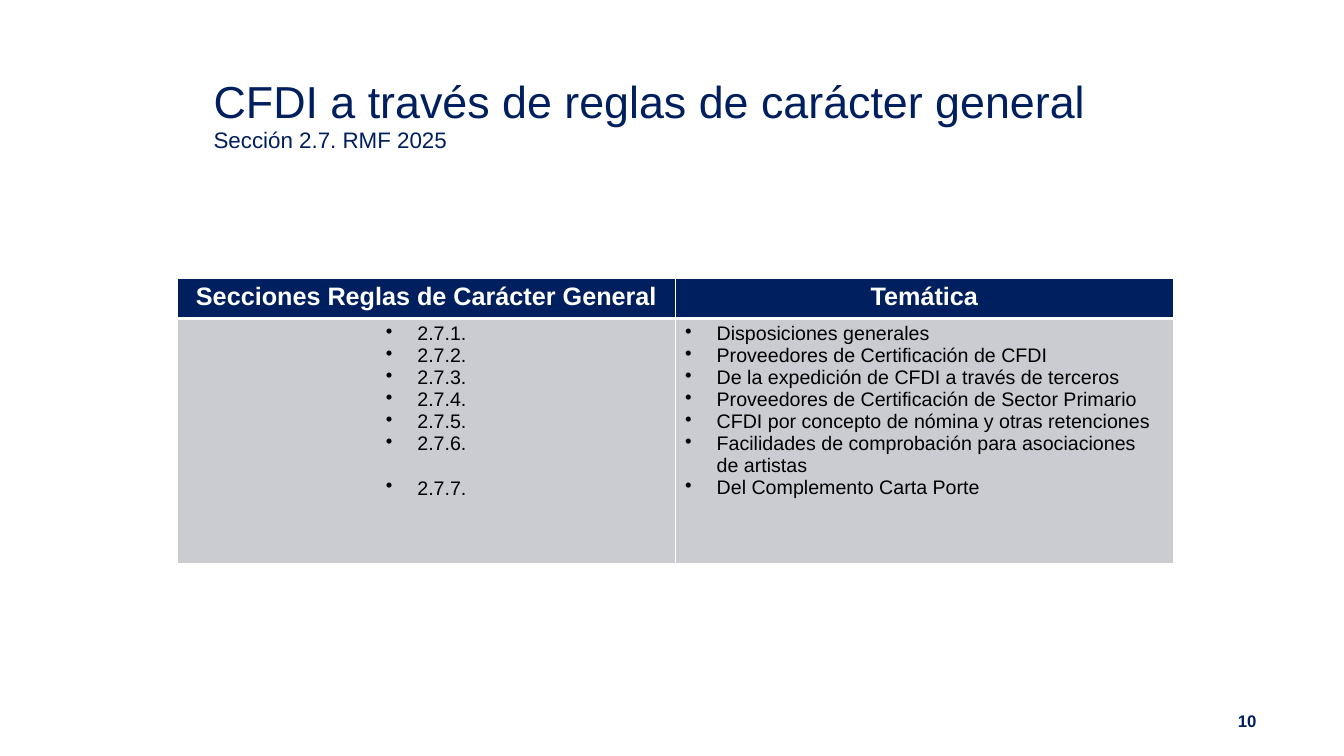
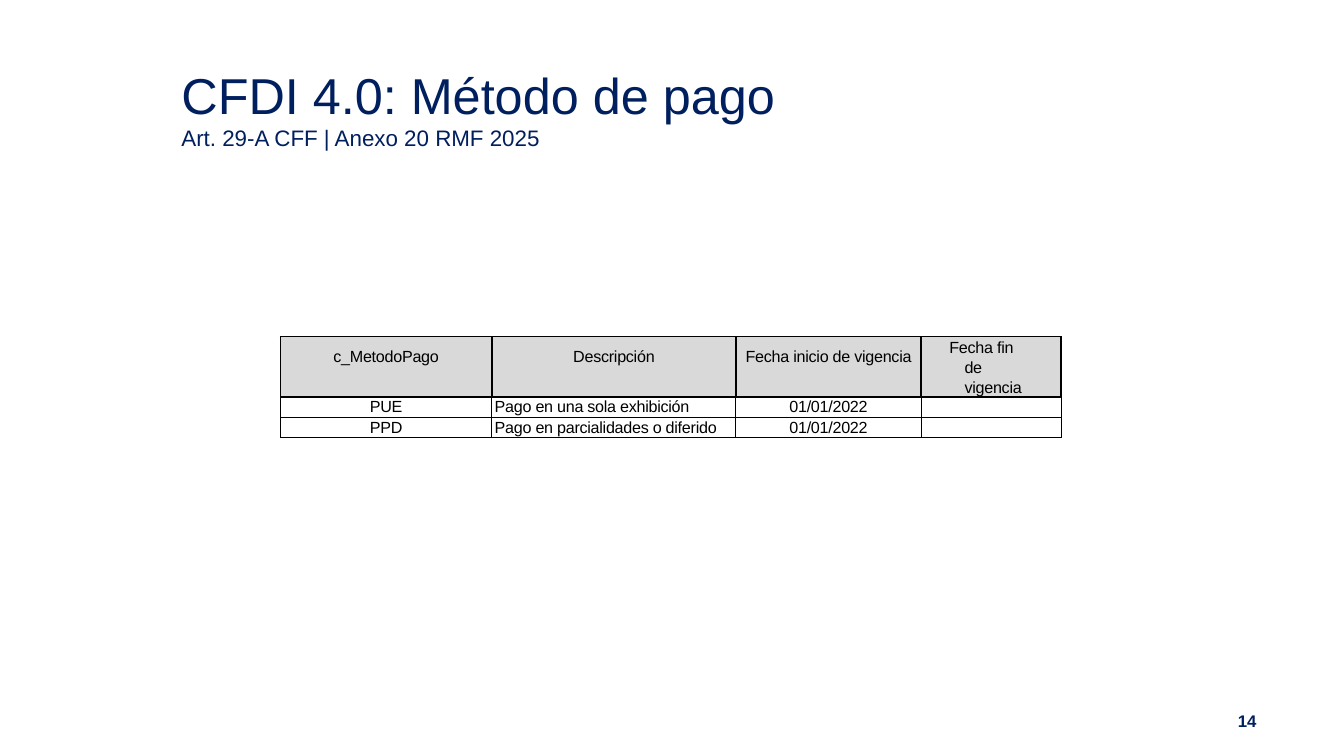
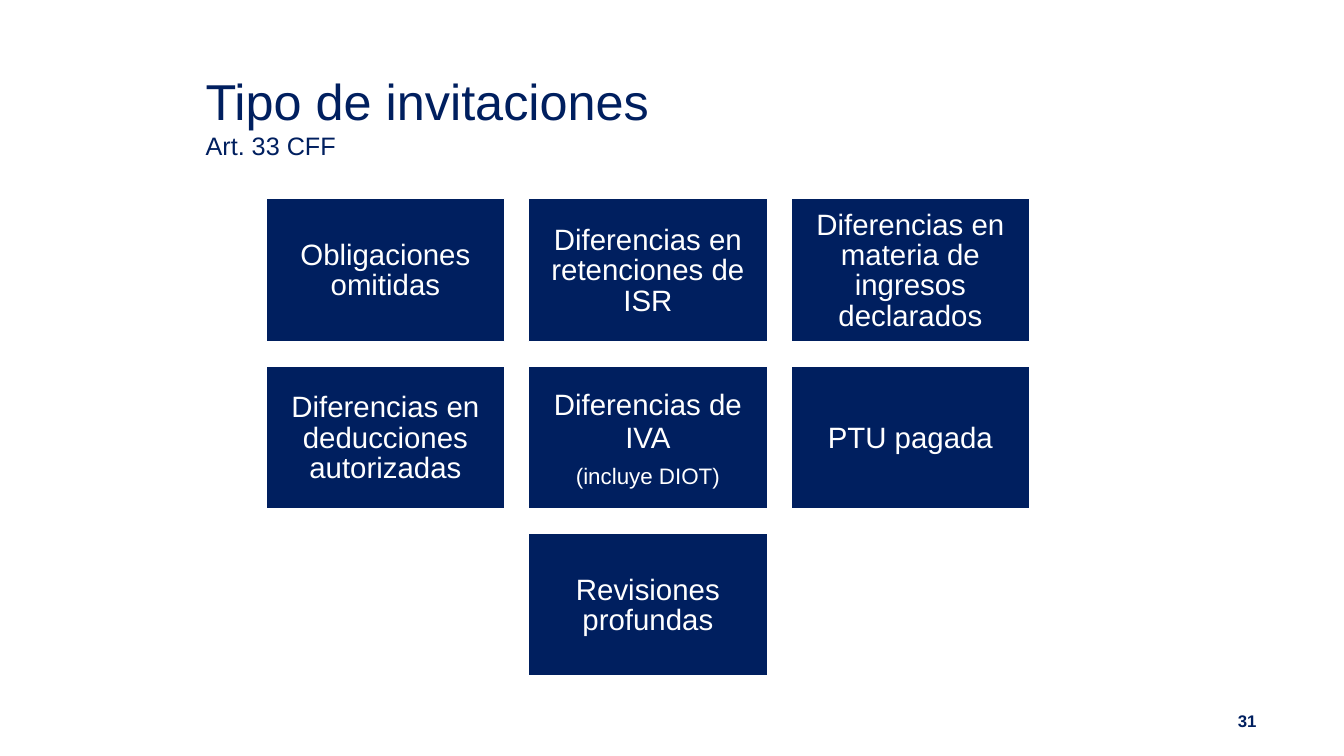
from dataclasses import dataclass

from lxml import etree
from pptx import Presentation
from pptx.dml.color import RGBColor
from pptx.enum.shapes import MSO_SHAPE
from pptx.enum.text import MSO_ANCHOR, PP_ALIGN
from pptx.oxml.ns import qn
from pptx.util import Pt

RECTANGLE = MSO_SHAPE.RECTANGLE
LEFT, CENTER = PP_ALIGN.LEFT, PP_ALIGN.CENTER
TOP, MIDDLE = MSO_ANCHOR.TOP, MSO_ANCHOR.MIDDLE


@dataclass(frozen=True)
class Theme:
    font: str = "Arial"
    navy: str = "001F5F"
    white: str = "FFFFFF"
    black: str = "000000"
    body_gray: str = "CACCD2"
    header_gray: str = "D9D9D9"
    page_size: float = 12
    header_size: float = 18
    body_size: float = 14
    catalog_size: float = 11.5
    card_size: float = 21
    note_size: float = 16


THEME = Theme()


def add_paragraph(frame, text, size, color, bold=False, tracking=0, **layout):
    """Write the next paragraph, filling the empty first one when there is one."""
    paragraph = frame.paragraphs[0]
    if paragraph.runs:
        paragraph = frame.add_paragraph()
    run = paragraph.add_run()
    run.text = text
    run.font.color.rgb = RGBColor.from_string(color)
    font_values = {"name": THEME.font, "size": Pt(size), "bold": bold}
    for name, value in font_values.items():
        setattr(run.font, name, value)
    if tracking:
        run.font._element.set("spc", str(round(tracking * 100)))
    for name, value in layout.items():
        setattr(paragraph, name, value)
    return paragraph


def set_indent(paragraph, left, first_line, bullet=None):
    properties = paragraph._p.get_or_add_pPr()
    properties.set("marL", str(Pt(left)))
    properties.set("indent", str(Pt(first_line)))
    if bullet:
        etree.SubElement(properties, qn("a:buChar"), char=bullet)


def set_frame(frame, anchor=TOP, left=0, top=0, right=0, bottom=0):
    values = {
        "word_wrap": True,
        "vertical_anchor": anchor,
        "margin_left": Pt(left),
        "margin_top": Pt(top),
        "margin_right": Pt(right),
        "margin_bottom": Pt(bottom),
    }
    for name, value in values.items():
        setattr(frame, name, value)


def add_text_box(slide, left, top, width, height):
    box = slide.shapes.add_textbox(Pt(left), Pt(top), Pt(width), Pt(height))
    set_frame(box.text_frame)
    return box.text_frame


def add_heading(slide, title, subtitle, left, top, title_size, subtitle_size):
    frame = add_text_box(slide, left, top, 670, 72)
    add_paragraph(frame, title, title_size, THEME.navy,
                  line_spacing=Pt(title_size * 1.18))
    add_paragraph(frame, subtitle, subtitle_size, THEME.navy,
                  line_spacing=Pt(subtitle_size * 1.155))


def add_page_number(slide, number):
    frame = add_text_box(slide, 884.2, 507.6, 24, 16)
    add_paragraph(frame, str(number), THEME.page_size, THEME.navy, bold=True,
                  line_spacing=Pt(14.3))


def start_slide(presentation, number, **heading):
    slide = presentation.slides.add_slide(presentation.slide_layouts[6])
    add_heading(slide, **heading)
    add_page_number(slide, number)
    return slide


def add_plain_table(slide, left, top, widths, heights):
    """Add a table whose built-in banding is switched off."""
    table = slide.shapes.add_table(
        len(heights), len(widths), Pt(left), Pt(top),
        Pt(sum(widths)), Pt(sum(heights))).table
    table.first_row = table.horz_banding = False
    for column, width in zip(table.columns, widths):
        column.width = Pt(width)
    for row, height in zip(table.rows, heights):
        row.height = Pt(height)
    return table


def format_cell(cell, fill, border_color, borders, anchor=TOP,
                left=0, top=0, right=0):
    """Set margins, borders (widths for L, R, T, B) and fill, in schema order."""
    values = {
        "vertical_anchor": anchor,
        "margin_left": Pt(left),
        "margin_top": Pt(top),
        "margin_right": Pt(right),
        "margin_bottom": 0,
    }
    for name, value in values.items():
        setattr(cell, name, value)
    properties = cell._tc.get_or_add_tcPr()
    for side, width in zip("LRTB", borders):
        line = etree.SubElement(properties, qn(f"a:ln{side}"), w=str(Pt(width)))
        solid = etree.SubElement(line, qn("a:solidFill"))
        etree.SubElement(solid, qn("a:srgbClr"), val=border_color)
    if fill:
        cell.fill.solid()
        cell.fill.fore_color.rgb = RGBColor.from_string(fill)
    else:
        cell.fill.background()


def add_sections_table(slide):
    headers = ["Secciones Reglas de Carácter General", "Temática"]
    sections = [f"2.7.{number}." for number in range(1, 8)]
    topics = [
        "Disposiciones generales",
        "Proveedores de Certificación de CFDI",
        "De la expedición de CFDI a través de terceros",
        "Proveedores de Certificación de Sector Primario",
        "CFDI por concepto de nómina y otras retenciones",
        "Facilidades de comprobación para asociaciones de artistas",
        "Del Complemento Carta Porte",
    ]
    table = add_plain_table(slide, 126.7, 198.7, [355.7, 355.7], [28.8, 175])
    for column, (header, items, indent) in enumerate(
            zip(headers, [sections, topics], [171.4, 29.5])):
        cell = table.cell(0, column)
        format_cell(cell, THEME.navy, THEME.white, [1, 1, 1, 3], top=3)
        add_paragraph(cell.text_frame, header, THEME.header_size, THEME.white,
                      bold=True, alignment=CENTER)
        cell = table.cell(1, column)
        format_cell(cell, THEME.body_gray, THEME.white, [1, 1, 3, 1],
                    top=3, right=12)
        for item in items:
            paragraph = add_paragraph(cell.text_frame, item, THEME.body_size,
                                      THEME.black)
            set_indent(paragraph, indent, -22.5, "•")
            if item == sections[-1]:
                # Leaves room for the two-line topic in the next column.
                paragraph.space_before = Pt(16)


def add_payment_table(slide):
    rows = [
        ["c_MetodoPago", "Descripción", "Fecha inicio de vigencia",
         "Fecha fin de vigencia"],
        ["PUE", "Pago en una sola exhibición", "01/01/2022", ""],
        ["PPD", "Pago en parcialidades o diferido", "01/01/2022", ""],
    ]
    thin, thick = 0.75, 1.5
    last = len(rows[0]) - 1
    table = add_plain_table(slide, 200.2, 240.5, [151.2, 174.3, 132.3, 100],
                            [43.2, 14.4, 14.4])
    for row, texts in enumerate(rows):
        for column, text in enumerate(texts):
            cell = table.cell(row, column)
            frame = cell.text_frame
            is_header = row == 0
            is_narrow_header = is_header and column == last
            if is_header:
                borders = [thick if column else thin, thick, thin, thick]
                format_cell(cell, THEME.header_gray, THEME.black, borders,
                            top=0 if is_narrow_header else 8,
                            right=24 if is_narrow_header else 0)
            else:
                borders = [thin, thin, thick if row == 1 else thin, thin]
                format_cell(cell, None, THEME.black, borders, anchor=MIDDLE,
                            left=2 if column == 1 else 0)
            if not text:
                etree.SubElement(frame.paragraphs[0]._p, qn("a:endParaRPr"),
                                 sz=str(round(THEME.catalog_size * 100)))
                continue
            is_left = is_narrow_header or (column == 1 and not is_header)
            paragraph = add_paragraph(
                frame, text, THEME.catalog_size, THEME.black, tracking=-0.2,
                alignment=LEFT if is_left else CENTER)
            if is_narrow_header:
                paragraph.line_spacing = Pt(14.4)
                set_indent(paragraph, 31, -10.8)


def add_card(slide, left, top, text, note=None):
    card = slide.shapes.add_shape(RECTANGLE, Pt(left), Pt(top),
                                  Pt(170.6), Pt(102.2))
    card.shadow.inherit = False
    card.fill.solid()
    card.fill.fore_color.rgb = RGBColor.from_string(THEME.navy)
    card.line.color.rgb = RGBColor.from_string(THEME.white)
    card.line.width = Pt(1)
    frame = card.text_frame
    set_frame(frame, MIDDLE, left=14, top=2, right=14)
    add_paragraph(frame, text, THEME.card_size, THEME.white, alignment=CENTER,
                  line_spacing=Pt(23.4 if note else 21.7))
    if note:
        add_paragraph(frame, note, THEME.note_size, THEME.white,
                      alignment=CENTER, space_before=Pt(6))


def add_invitation_cards(slide):
    rows = [
        [("Obligaciones omitidas",),
         ("Diferencias en retenciones de ISR",),
         ("Diferencias en materia de ingresos declarados",)],
        [("Diferencias en deducciones autorizadas",),
         ("Diferencias de IVA", "(incluye DIOT)"),
         ("PTU pagada",)],
        [("Revisiones profundas",)],
    ]
    step_x, step_y = 187.5, 119.5
    for row, cards in enumerate(rows):
        row_left = 190 + (3 - len(cards)) * step_x / 2
        for column, texts in enumerate(cards):
            add_card(slide, row_left + column * step_x, 141.8 + row * step_y,
                     *texts)


def main():
    presentation = Presentation()
    presentation.slide_width = Pt(960)
    presentation.slide_height = Pt(540)

    slide = start_slide(
        presentation, 10, title="CFDI a través de reglas de carácter general",
        subtitle="Sección 2.7. RMF 2025", left=152.6, top=53.3,
        title_size=32, subtitle_size=16)
    add_sections_table(slide)

    slide = start_slide(
        presentation, 14, title="CFDI 4.0: Método de pago",
        subtitle="Art. 29-A CFF | Anexo 20 RMF 2025", left=129.6, top=46.8,
        title_size=36, subtitle_size=16)
    add_payment_table(slide)

    slide = start_slide(
        presentation, 31, title="Tipo de invitaciones",
        subtitle="Art. 33 CFF", left=146.9, top=51.1,
        title_size=36, subtitle_size=18)
    add_invitation_cards(slide)

    presentation.save("out.pptx")


if __name__ == "__main__":
    main()
